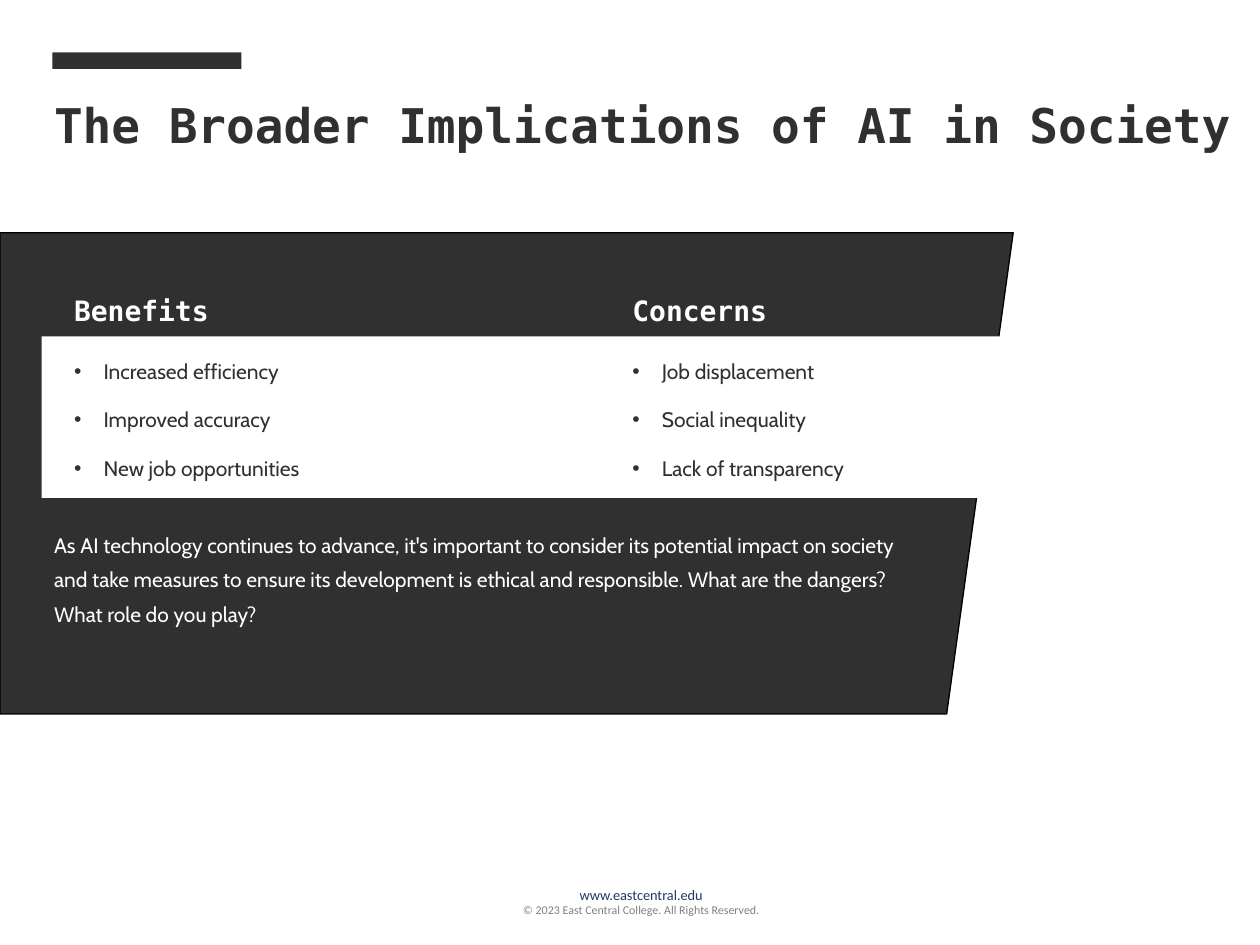
from lxml.etree import SubElement
from pptx import Presentation
from pptx.dml.color import RGBColor
from pptx.enum.shapes import MSO_SHAPE as Shape
from pptx.enum.text import MSO_AUTO_SIZE as AutoSize, PP_ALIGN as Align
from pptx.oxml.ns import qn
from pptx.util import Pt

COLORS = {
    "dark": "303030",
    "white": "FFFFFF",
    "black": "000000",
    "navy": "233962",
    "grey": "808080",
}
MONO, BODY, FOOTER = "DejaVu Sans Mono", "Cabin", "Calibri"
STYLES = {
    "title": {"name": MONO, "size": 27.3, "color": "dark", "bold": True, "spacing": 35.5},
    "heading": {"name": MONO, "size": 16, "color": "white", "bold": True, "spacing": 17.8},
    "item": {"name": BODY, "size": 12, "color": "dark", "spacing": 19.7},
    "closing": {"name": BODY, "size": 12, "color": "white", "spacing": 19.7},
    "address": {"name": FOOTER, "size": 8.2, "color": "navy", "align": Align.CENTER},
    "copyright": {"name": FOOTER, "size": 6.8, "color": "grey", "align": Align.CENTER},
}
COLUMNS = {
    "Benefits": ["Increased efficiency", "Improved accuracy", "New job opportunities"],
    "Concerns": ["Job displacement", "Social inequality", "Lack of transparency"],
}
COLUMN_LEFT, COLUMN_STEP = 35.3, 319
ITEM_TOP, ITEM_STEP = 195.9, 27.8


def rgb(color):
    return RGBColor.from_string(COLORS[color])


class SlideBuilder:
    def __init__(self, slide):
        self.shapes = slide.shapes

    def fill(self, shape, color):
        shape.shadow.inherit = False
        shape.fill.solid()
        shape.fill.fore_color.rgb = rgb(color)

    def rectangle(self, left, top, width, height, color):
        shape = self.shapes.add_shape(
            Shape.RECTANGLE, Pt(left), Pt(top), Pt(width), Pt(height))
        self.fill(shape, color)
        shape.line.fill.background()

    def polygon(self, points, color, outline):
        builder = self.shapes.build_freeform(*points[0], scale=Pt(1))
        builder.add_line_segments(points[1:], close=True)
        shape = builder.convert_to_shape()
        self.fill(shape, color)
        shape.line.color.rgb = rgb(outline)
        shape.line.width = Pt(0)

    def text(self, left, top, width, height, *lines, wrap=False, bullet=None):
        """Add a box with one paragraph for each (text, style name) pair."""
        box = self.shapes.add_textbox(Pt(left), Pt(top), Pt(width), Pt(height))
        frame = box.text_frame
        frame.word_wrap = wrap
        frame.auto_size = AutoSize.NONE
        for index, (words, style) in enumerate(lines):
            para = frame.add_paragraph() if index else frame.paragraphs[0]
            self.format(para, words, STYLES[style])
            if bullet:
                self.bullet(para, bullet)

    def format(self, para, words, style):
        para.alignment = style.get("align", Align.LEFT)
        if "spacing" in style:
            para.line_spacing = Pt(style["spacing"])
        span = para.add_run()
        span.text = words
        values = {"name": style["name"], "size": Pt(style["size"]),
                  "bold": style.get("bold", False)}
        for name, value in values.items():
            setattr(span.font, name, value)
        span.font.color.rgb = rgb(style["color"])

    def bullet(self, para, char, indent=16.8):
        properties = para._p.get_or_add_pPr()
        properties.set("marL", str(Pt(indent)))
        properties.set("indent", str(-Pt(indent)))
        SubElement(properties, qn("a:buFont"), typeface="Arial")
        SubElement(properties, qn("a:buChar"), char=char)


def main():
    deck = Presentation()
    deck.slide_width, deck.slide_height = Pt(720), Pt(540)
    page = SlideBuilder(deck.slides.add_slide(deck.slide_layouts[6]))

    page.text(186.5, 502.6, 360, 25.2,
              ("www.eastcentral.edu", "address"),
              ("© 2023 East Central College. All Rights Reserved.", "copyright"))
    page.polygon([(0, 133.2), (0, 408.2), (541, 408.2), (579, 133.2)], "dark", "black")
    page.text(23.8, 48.2, 568.8, 35.3,
              ("The Broader Implications of AI in Society", "title"))
    page.rectangle(23.8, 192.2, 637.9, 92.4, "white")

    for column, (heading, items) in enumerate(COLUMNS.items()):
        left = COLUMN_LEFT + column * COLUMN_STEP
        page.text(left, 165.6, 109.4, 18, (heading, "heading"))
        for row, item in enumerate(items):
            page.text(left, ITEM_TOP + row * ITEM_STEP, 279.4, 19.4,
                      (item, "item"), bullet="•")

    page.text(23.8, 295.2, 509.8, 92.9,
              ("As AI technology continues to advance, it's important to consider its "
               "potential impact on society and take measures to ensure its development "
               "is ethical and responsible. What are the dangers? What role do you play?",
               "closing"), wrap=True)
    page.rectangle(30, 30, 108, 9.4, "dark")
    deck.save("out.pptx")


if __name__ == "__main__":
    main()
